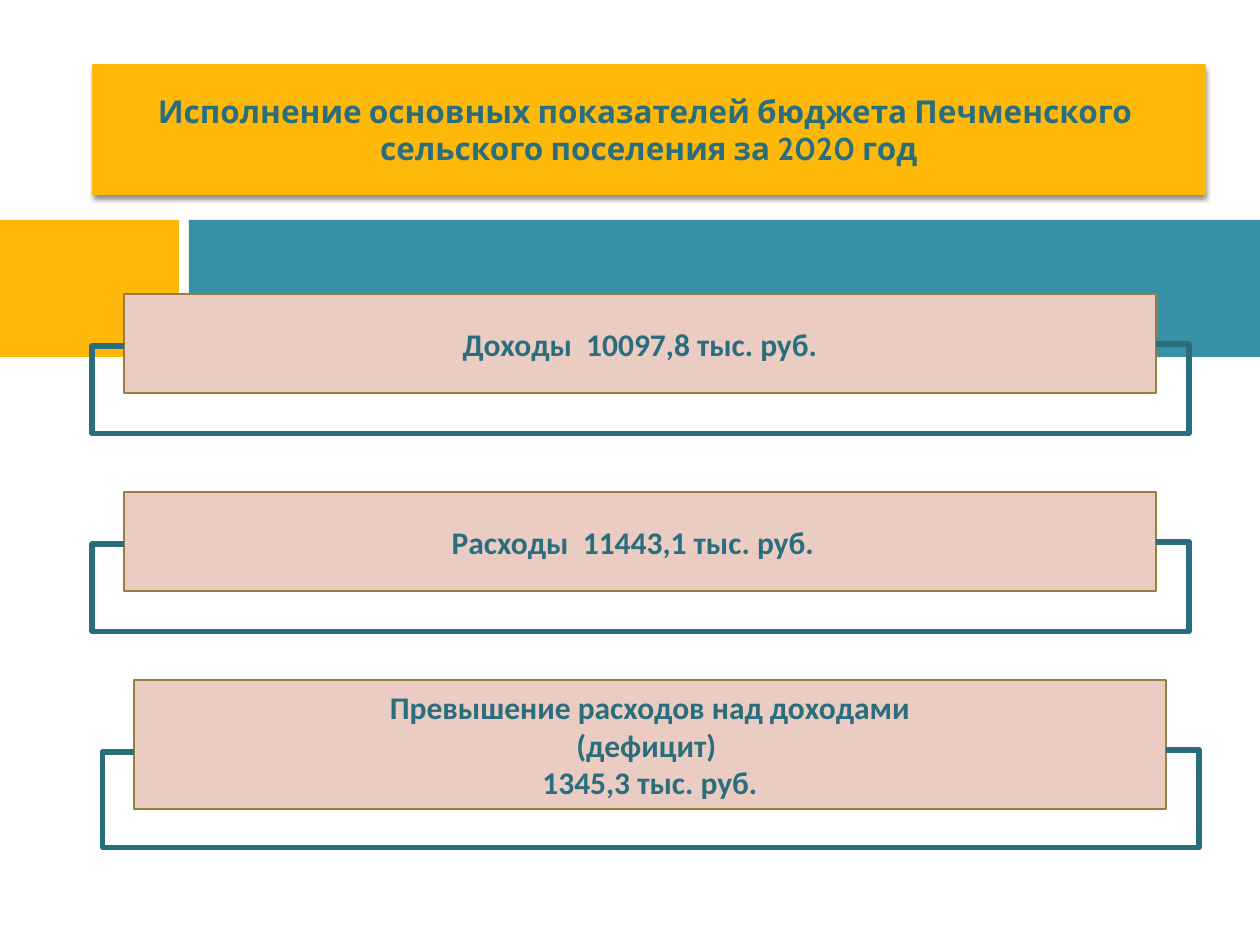
from lxml.etree import SubElement
from pptx import Presentation
from pptx.dml.color import RGBColor
from pptx.enum.shapes import MSO_CONNECTOR as Link, MSO_SHAPE as Preset
from pptx.enum.text import MSO_ANCHOR as Anchor, PP_ALIGN as Align
from pptx.oxml.ns import qn
from pptx.util import Pt

PX = 914400 // 126
COLORS = {"gold": "FEB80A", "teal": "3891A7", "dark": "2A6D7D",
          "pink": "EACCC3", "brown": "967D42", "black": "000000"}


def color(name):
    return RGBColor.from_string(COLORS[name])


def add_box(page, left, top, width, height, fill, lines=(), font="Calibri",
            outline=None, weight=1.5):
    box = page.shapes.add_shape(Preset.RECTANGLE, left * PX, top * PX, width * PX, height * PX)
    box.shadow.inherit = False
    box.fill.solid()
    box.fill.fore_color.rgb = color(fill)
    if outline:
        box.line.color.rgb = color(outline)
        box.line.width = Pt(weight)
    else:
        box.line.fill.background()
    frame = box.text_frame
    frame.word_wrap = True
    frame.vertical_anchor = Anchor.MIDDLE
    for index, line in enumerate(lines):
        para = frame.add_paragraph() if index else frame.paragraphs[0]
        para.alignment = Align.CENTER
        span = para.add_run()
        span.text = line
        span.font.name = font
        span.font.size = Pt(18)
        span.font.bold = True
        span.font.color.rgb = color("dark")
    return box


deck = Presentation()
deck.slide_width = 1260 * PX
deck.slide_height = 945 * PX
page = deck.slides.add_slide(deck.slide_layouts[6])

add_box(page, 0, 220, 179, 137, "gold")
add_box(page, 189, 220, 1071, 137, "teal")

title = add_box(page, 93, 65, 1112, 129, "gold",
                ["Исполнение основных показателей бюджета Печменского ",
                 "сельского поселения за 2020 год"],
                font="Cabin", outline="gold", weight=0.79)
effects = title._element.spPr.find(qn("a:effectLst"))
shadow = SubElement(effects, qn("a:outerShdw"), blurRad=str(Pt(3)), dist=str(Pt(2.4)),
                    dir="5400000", algn="ctr", rotWithShape="0")
tint = SubElement(shadow, qn("a:srgbClr"), val=COLORS["black"])
SubElement(tint, qn("a:alpha"), val="45000")

indicators = [
    (124, 294, 99, 344, 88, ["Доходы  10097,8 тыс. руб."]),
    (124, 492, 99, 542, 88, ["Расходы  11443,1 тыс. руб.  "]),
    (134, 680, 129, 750, 96, ["Превышение расходов над доходами", "(дефицит) ",
                              "1345,3 тыс. руб."]),
]
WIDTH, RISE = 1032, 2

for left, top, height, link_top, drop, lines in indicators:
    add_box(page, left, top, WIDTH, height, "pink", lines, outline="brown")

    bracket = page.shapes.add_connector(Link.ELBOW, left * PX, link_top * PX,
                                        (left + WIDTH) * PX, (link_top + RISE) * PX)
    bracket.line.color.rgb = color("dark")
    bracket.line.width = Pt(3)
    props = bracket._element.spPr
    SubElement(props, qn("a:effectLst"))
    frame = props.find(qn("a:xfrm"))
    frame.set("rot", "10800000")
    frame.set("flipH", "1")
    geometry = props.find(qn("a:prstGeom"))
    geometry.set("prst", "bentConnector5")
    guides = geometry.find(qn("a:avLst"))
    for number, share in enumerate((-0.031, -drop / RISE, 1.032), 1):
        SubElement(guides, qn("a:gd"), name=f"adj{number}", fmla=f"val {round(share * 100000)}")

deck.save("out.pptx")
